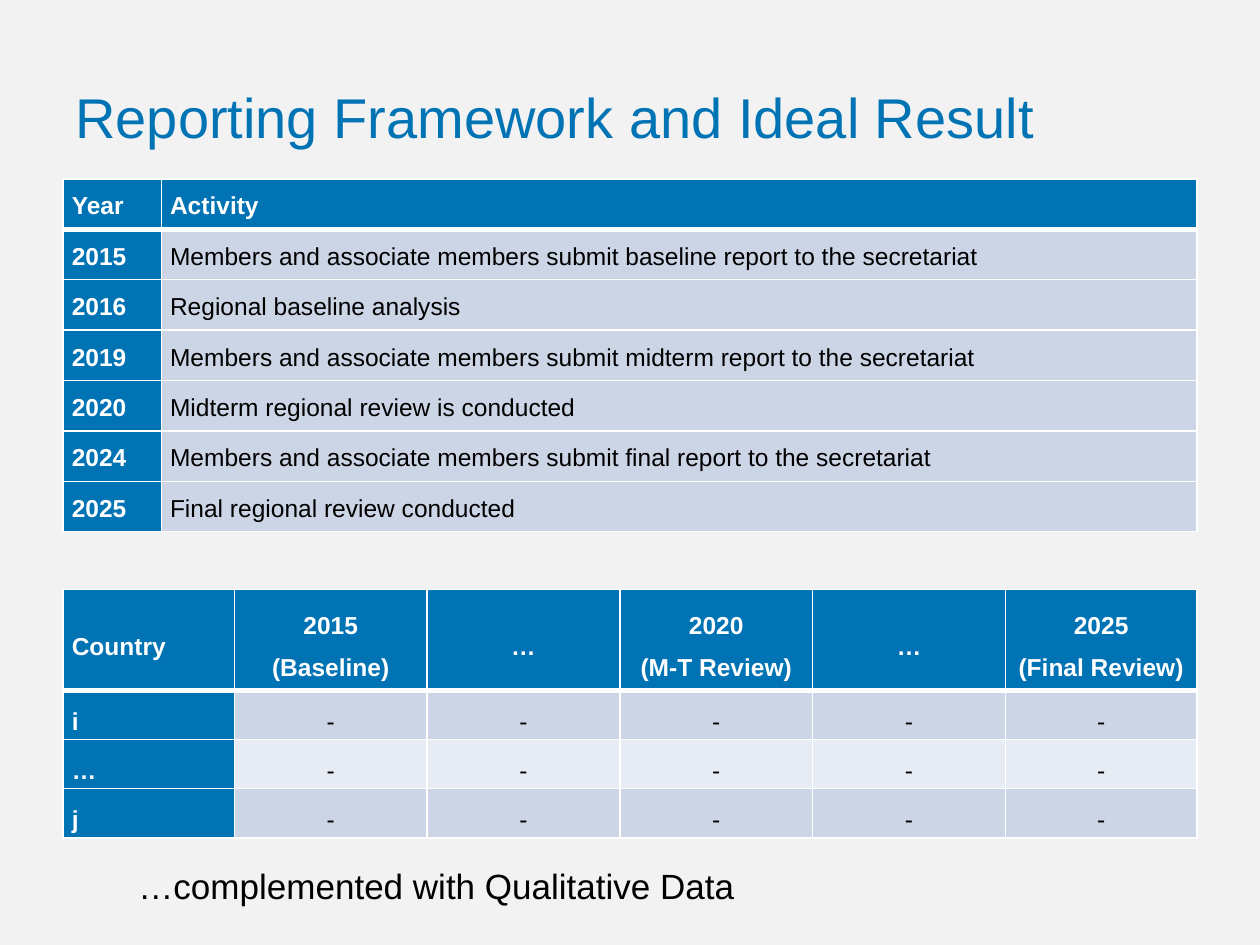
from lxml import etree
from pptx import Presentation
from pptx.dml.color import RGBColor
from pptx.enum.text import MSO_ANCHOR, PP_ALIGN
from pptx.oxml.ns import qn
from pptx.util import Inches, Pt

BLUE = RGBColor(0x00, 0x73, 0xB5)
WHITE = RGBColor(0xFF, 0xFF, 0xFF)
BLACK = RGBColor(0x00, 0x00, 0x00)
BACKGROUND = RGBColor(0xF2, 0xF2, 0xF2)
BAND_DARK = RGBColor(0xCC, 0xD5, 0xE5)
BAND_LIGHT = RGBColor(0xE7, 0xEB, 0xF3)

TOP, MIDDLE = MSO_ANCHOR.TOP, MSO_ANCHOR.MIDDLE
LEFT, CENTER, JUSTIFY = PP_ALIGN.LEFT, PP_ALIGN.CENTER, PP_ALIGN.JUSTIFY

ACTIVITIES = [
    ("Year", "Activity"),
    ("2015", "Members and associate members submit baseline report to the secretariat"),
    ("2016", "Regional baseline analysis"),
    ("2019", "Members and associate members submit midterm report to the secretariat"),
    ("2020", "Midterm regional review is conducted"),
    ("2024", "Members and associate members submit final report to the secretariat"),
    ("2025", "Final regional review conducted"),
]
RESULTS = [
    ("Country", "2015\n(Baseline)", "…", "2020\n(M-T Review)", "…", "2025\n(Final Review)"),
    *[(country, *["-"] * 5) for country in ("i", "…", "j")],
]


class SlideBuilder:
    font_name = "Arial"
    table_size = Pt(14)
    thin, thick = Pt(1), Pt(3)

    def __init__(self, page):
        self.page = page
        page.background.fill.solid()
        page.background.fill.fore_color.rgb = BACKGROUND

    def style(self, para, size, color, bold=False):
        for span in para.runs:
            span.font.name = self.font_name
            span.font.size = size
            span.font.bold = bold
            span.font.color.rgb = color

    def text(self, left, top, width, height, words, size, color, anchor=TOP, indent=0):
        box = self.page.shapes.add_textbox(
            Inches(left), Inches(top), Inches(width), Inches(height))
        frame = box.text_frame
        frame.word_wrap = True
        frame.vertical_anchor = anchor
        frame.text = words
        para = frame.paragraphs[0]
        if indent:
            para._p.get_or_add_pPr().set("marL", str(Inches(indent)))
        self.style(para, Pt(size), color)

    def borders(self, cell, row):
        properties = cell._tc.get_or_add_tcPr()
        heavy_sides = {0: "lnB", 1: "lnT"}  # the rule below the header row
        for side in ("lnL", "lnR", "lnT", "lnB"):
            width = self.thick if heavy_sides.get(row) == side else self.thin
            line = etree.SubElement(properties, qn(f"a:{side}"), w=str(width))
            fill = etree.SubElement(line, qn("a:solidFill"))
            etree.SubElement(fill, qn("a:srgbClr"), val=str(WHITE))

    def table(self, left, top, widths, heights, rows, bands,
              anchor=TOP, first_align=LEFT, align=LEFT, space_after=0):
        table = self.page.shapes.add_table(
            len(rows), len(widths), Inches(left), Inches(top),
            Inches(sum(widths)), Inches(sum(heights))).table
        for column, width in zip(table.columns, widths):
            column.width = Inches(width)
        for row, (words, height) in enumerate(zip(rows, heights)):
            table.rows[row].height = Inches(height)
            for column, word in enumerate(words):
                cell = table.cell(row, column)
                heading = row == 0 or column == 0
                self.borders(cell, row)
                cell.fill.solid()
                cell.fill.fore_color.rgb = BLUE if heading else bands[row % len(bands)]
                cell.margin_left = cell.margin_right = Inches(0.07)
                cell.margin_top = cell.margin_bottom = 0
                cell.vertical_anchor = anchor
                cell.text_frame.text = word
                for para in cell.text_frame.paragraphs:
                    para.alignment = align if column else first_align
                    para.line_spacing = 1.5
                    para.space_after = Pt(space_after)
                    self.style(para, self.table_size, WHITE if heading else BLACK, heading)


def main():
    deck = Presentation()
    deck.slide_width, deck.slide_height = Inches(10), Inches(7.5)
    builder = SlideBuilder(deck.slides.add_slide(deck.slide_layouts[6]))

    # Title
    builder.text(0.5, 0.3, 8.14, 1.25, "Reporting Framework and Ideal Result",
                 32, BLUE, anchor=MIDDLE)

    # Reporting calendar
    builder.table(0.5, 1.42, [0.78, 8.22], [0.4] * len(ACTIVITIES), ACTIVITIES,
                  [BAND_DARK], space_after=8)

    # Ideal result by country
    builder.table(0.5, 4.68, [1.36] + [1.53] * 4 + [1.52], [0.8] + [0.39] * 3, RESULTS,
                  [BAND_LIGHT, BAND_DARK], anchor=MIDDLE, first_align=JUSTIFY, align=CENTER)

    # Closing remark
    builder.text(0.5, 6.81, 9.35, 0.35, "…complemented with Qualitative Data",
                 20, BLACK, indent=0.5)

    deck.save("out.pptx")


if __name__ == "__main__":
    main()
